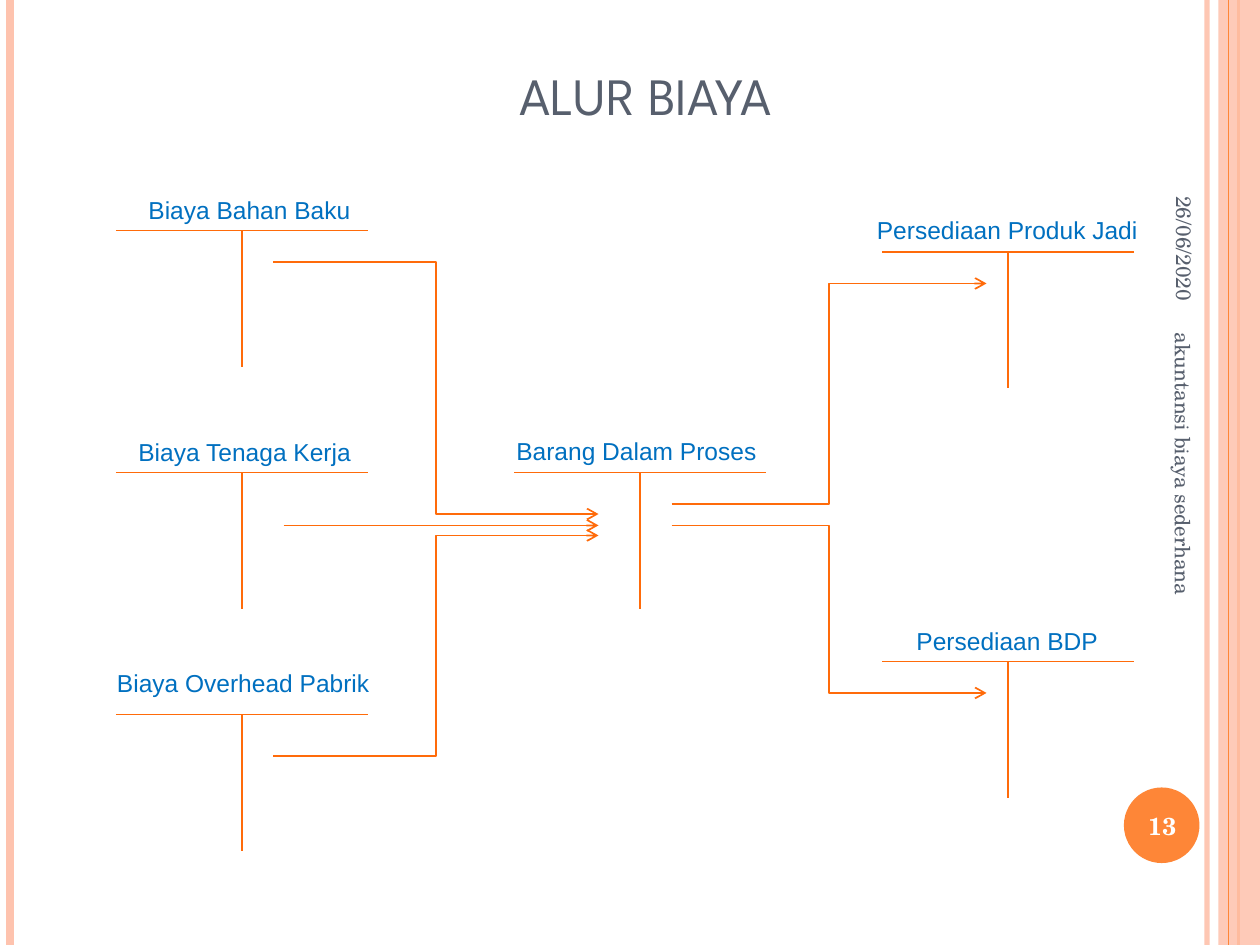
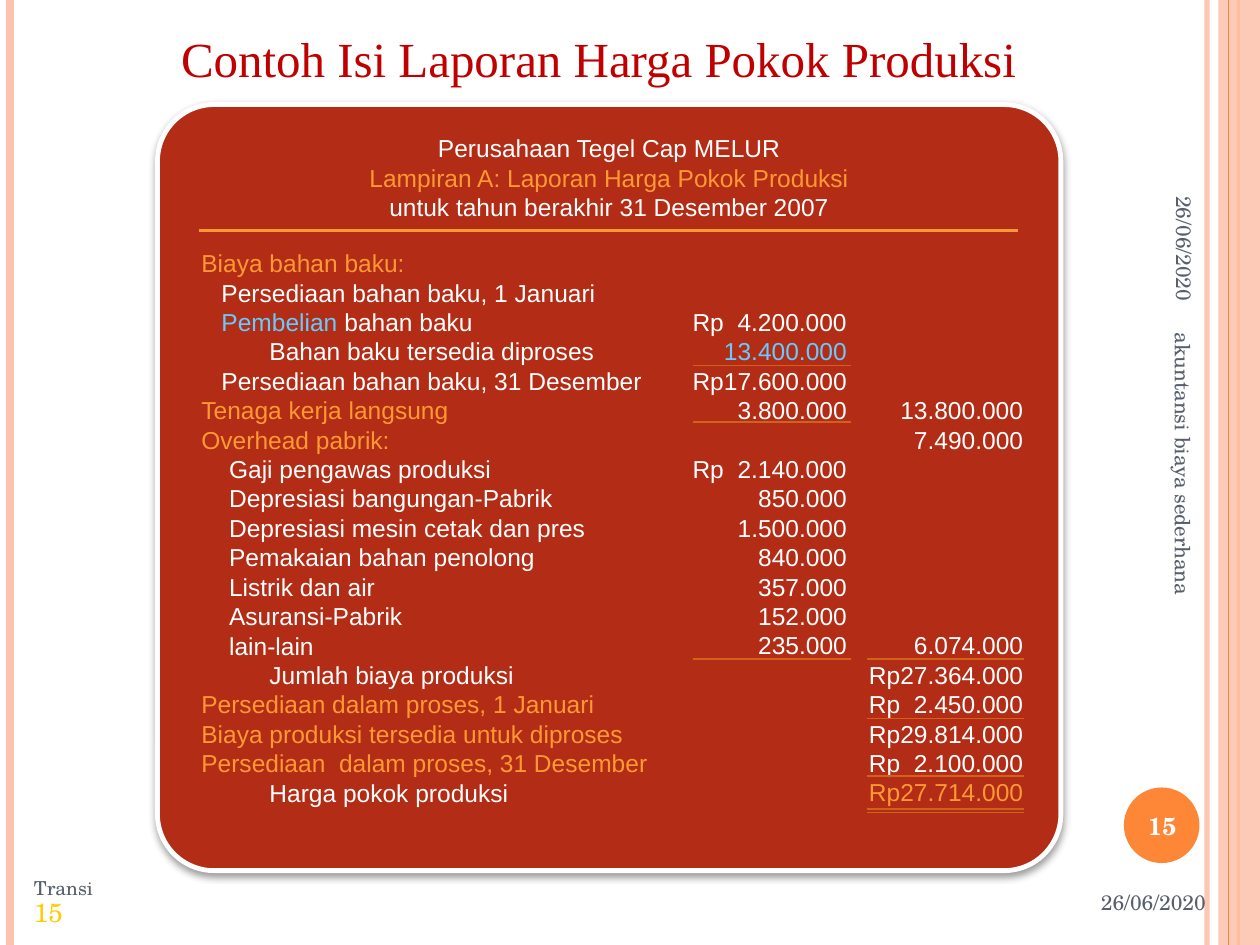
"""Build two cost accounting slides: the cost flow and the production cost report."""
from lxml import etree
from pptx import Presentation
from pptx import util as u
from pptx.dml.color import RGBColor
from pptx.enum import shapes, text
from pptx.oxml.ns import qn

LEFT, CENTER, RIGHT = text.PP_ALIGN.LEFT, text.PP_ALIGN.CENTER, text.PP_ALIGN.RIGHT
TOP, MIDDLE, BOTTOM = (text.MSO_ANCHOR.TOP, text.MSO_ANCHOR.MIDDLE,
                       text.MSO_ANCHOR.BOTTOM)
STRAIGHT, ELBOW = shapes.MSO_CONNECTOR.STRAIGHT, shapes.MSO_CONNECTOR.ELBOW
SHAPE = shapes.MSO_SHAPE
SANS, SERIF = "Arial", "TeX Gyre Schola"
PEACH, ORANGE, FLOW, SUM = "FEC3AE", "FE8637", "FF6B0A", "D2611C"
GRAY, WHITE, GOLD, SKY, BLUE = "575F6D", "FFFFFF", "FF9933", "66CCFF", "0070C0"
BRICK, RED, YELLOW = "B32C16", "C00000", "FFCC00"
ROW = 16.8
DATE = "26/06/2020"


def rgb(hex_color):
    return RGBColor.from_string(hex_color)


def inches(*values):
    return [u.Inches(v) for v in values]


def sub(parent, tag, **attrs):
    return etree.SubElement(parent, qn(tag), {k: str(v) for k, v in attrs.items()})


def set_alpha(fill, percent):
    sub(fill.find(qn("a:srgbClr")), "a:alpha", val=percent * 1000)


def style_run(r, size, font, color, bold=False):
    r.font.size, r.font.name, r.font.bold = u.Pt(size), font, bold
    r.font.color.rgb = rgb(color)


class Deck:
    def __init__(self):
        self.prs = Presentation()
        self.prs.slide_width, self.prs.slide_height = inches(10, 7.5)
        self.s = None

    def slide(self, number):
        self.s = self.prs.slides.add_slide(self.prs.slide_layouts[5])
        self.line((9.58, 0), (9.58, 7.5), PEACH, 3, alpha=93)
        self.line((0.08, 0), (0.08, 7.5), PEACH, 4.5)
        self.line((9.83, 0), (9.83, 7.5), ORANGE, 1.5)
        band = self.shape(SHAPE.RECTANGLE, (9.67, 0, 0.33, 7.5), PEACH)
        set_alpha(band._element.spPr.find(qn("a:solidFill")), 87)
        self.line((9.75, 0), (9.75, 7.5), ORANGE, 0.75)
        self.shape(SHAPE.OVAL, (8.92, 6.25, 0.6, 0.6), ORANGE)
        self.text((8.3, 1.18, 2.2, 0.42), [DATE], 12, SERIF, GRAY, RIGHT, MIDDLE, rot=90)
        self.text((8.89, 6.27, 0.67, 0.57), [str(number)], 14, SERIF, WHITE, CENTER,
                  MIDDLE, bold=True)
        self.text((7.64, 4.09, 3.5, 0.4), ["akuntansi biaya sederhana"], 12, SERIF,
                  GRAY, LEFT, MIDDLE, rot=90)

    def shape(self, kind, box, fill):
        sp = self.s.shapes.add_shape(kind, *inches(*box))
        sp.shadow.inherit = False
        sp.fill.solid()
        sp.fill.fore_color.rgb = rgb(fill)
        sp.line.fill.background()
        return sp

    def line(self, start, end, color, width, kind=STRAIGHT, arrow=False, alpha=None):
        cx = self.s.shapes.add_connector(kind, *inches(*start, *end))
        cx.line.color.rgb = rgb(color)
        cx.line.width = u.Pt(width)
        ln = cx.line._get_or_add_ln()
        if alpha:
            set_alpha(ln.find(qn("a:solidFill")), alpha)
        if arrow:
            sub(ln, "a:tailEnd", type="arrow")
        sub(cx._element.spPr, "a:effectLst")

    def fill_text(self, sp, lines, size, font, color, align, anchor, bold=False):
        tf = sp.text_frame
        tf.word_wrap = True
        tf.auto_size = text.MSO_AUTO_SIZE.NONE
        tf.vertical_anchor = anchor
        tf.text = "\n".join(lines)
        for p in tf.paragraphs:
            p.alignment = align
            if font == SANS:
                p.line_spacing = u.Pt(ROW)
            for r in p.runs:
                style_run(r, size, font, color, bold)
        return tf.paragraphs

    def text(self, box, lines, size=14, font=SANS, color=WHITE, align=LEFT, anchor=TOP,
             bold=False, rot=0):
        sp = self.s.shapes.add_textbox(*inches(*box))
        sp.rotation = rot
        return self.fill_text(sp, lines, size, font, color, align, anchor, bold)

    def title(self, box, line, size, font, color, anchor):
        sp = self.s.shapes.title
        sp.left, sp.top, sp.width, sp.height = inches(*box)
        self.fill_text(sp, [line], size, font, color, CENTER, anchor)

    def t_account(self, left, top):
        self.line((left, top), (left + 2, top), FLOW, 1)
        self.line((left + 1, top), (left + 1, top + 1.08), FLOW, 1)

    def amounts(self, left, width, values):
        """Write right-aligned amounts, keyed by report row, below the report's top."""
        rows = list(values)
        top = 1.92 + rows[0] * ROW / 72
        height = 0.1 + (rows[-1] - rows[0] + 1) * ROW / 72
        ps = self.text((left, top, width, height), list(values.values()), align=RIGHT)
        for p, before, row in zip(ps[1:], rows, rows[1:]):
            p.space_before = u.Pt((row - before - 1) * ROW)
        return dict(zip(rows, ps))


def cost_flow(deck):
    deck.slide(13)
    deck.title((2.5, 0.33, 5.25, 0.72), "ALUR BIAYA", 30, "League Spartan", GRAY, BOTTOM)
    accounts = [
        ("Biaya Bahan Baku", 0.92, 1.83, 1.08, 1.5, 1.83, LEFT),
        ("Biaya Tenaga Kerja", 0.92, 3.75, 1, 3.42, 1.92, LEFT),
        ("Biaya Overhead Pabrik", 0.92, 5.67, 0.83, 5.25, 2.25, LEFT),
        ("Barang Dalam Proses", 4.08, 3.75, 4, 3.41, 2.17, LEFT),
        ("Persediaan Produk Jadi", 7, 2, 6.83, 1.66, 2.33, CENTER),
        ("Persediaan BDP", 7, 5.25, 7.08, 4.92, 1.83, CENTER),
    ]
    for name, left, top, label_left, label_top, width, align in accounts:
        deck.t_account(left, top)
        deck.text((label_left, label_top, width, 0.34), [name], color=BLUE, align=align)
    flows = [
        ((2.17, 2.08), (4.75, 4.08), ELBOW),
        ((2.17, 6), (4.75, 4.25), ELBOW),
        ((2.25, 4.17), (4.75, 4.17), STRAIGHT),
        ((5.33, 4), (7.83, 2.25), ELBOW),
        ((5.33, 4.17), (7.83, 5.5), ELBOW),
    ]
    for start, end, kind in flows:
        deck.line(start, end, FLOW, 1, kind, arrow=True)


def cost_report(deck):
    deck.slide(15)
    deck.title((0.5, 0.25, 8.5, 0.42), "Contoh Isi Laporan Harga Pokok Produksi", 28,
               "Times New Roman", RED, MIDDLE)
    card = deck.shape(SHAPE.ROUNDED_RECTANGLE, (1.25, 0.83, 7.17, 6.08), BRICK)
    card.adjustments[0] = 0.074
    card.line.color.rgb = rgb(WHITE)
    card.line.width = u.Pt(2.75)
    effects = card._element.spPr.find(qn("a:effectLst"))
    shadow = sub(effects, "a:outerShdw", blurRad=u.Pt(4), dist=u.Pt(2), dir=90 * 60000,
                 rotWithShape=0)
    set_alpha_color = sub(shadow, "a:srgbClr", val="000000")
    sub(set_alpha_color, "a:alpha", val=40000)

    items = [
        ("Biaya bahan baku:", 0),
        ("Persediaan bahan baku, 1 Januari", 0.16),
        ("Pembelian", 0.16),
        ("Bahan baku tersedia diproses", 0.54),
        ("Persediaan bahan baku, 31 Desember", 0.16),
        ("Tenaga kerja langsung", 0),
        ("Overhead pabrik:", 0),
        ("Gaji pengawas produksi", 0.22),
        ("Depresiasi bangungan-Pabrik", 0.22),
        ("Depresiasi mesin cetak dan pres", 0.22),
        ("Pemakaian bahan penolong", 0.22),
        ("Listrik dan air", 0.22),
        ("Asuransi-Pabrik", 0.22),
        ("lain-lain", 0.22),
        ("Jumlah biaya produksi", 0.54),
        ("Persediaan dalam proses, 1 Januari", 0),
        ("Biaya produksi tersedia untuk diproses", 0),
        ("Persediaan  dalam proses, 31 Desember", 0),
        ("Harga pokok produksi", 0.54),
    ]
    ps = deck.text((1.5, 1.92, 4.17, 4.58), [name for name, _ in items])
    for p, (_, indent) in zip(ps, items):
        p._p.get_or_add_pPr().set("marL", str(u.Inches(indent)))
        if not indent:
            p.runs[0].font.color.rgb = rgb(GOLD)
    ps[2].runs[0].font.color.rgb = rgb(SKY)
    r = ps[2].add_run()
    r.text = " bahan baku"
    style_run(r, 14, SANS, WHITE)

    details = deck.amounts(5.24, 1.58, {
        2: "Rp  4.200.000", 3: "13.400.000", 4: "Rp17.600.000", 5: "3.800.000",
        7: "Rp  2.140.000", 8: "850.000", 9: "1.500.000", 10: "840.000",
        11: "357.000", 12: "152.000", 13: "235.000"})
    details[3].runs[0].font.color.rgb = rgb(SKY)
    totals = deck.amounts(6.72, 1.5, {
        5: "13.800.000", 6: "7.490.000", 13: "6.074.000", 14: "Rp27.364.000",
        15: "Rp  2.450.000", 16: "Rp29.814.000", 17: "Rp  2.100.000",
        18: "Rp27.714.000"})
    totals[18].runs[0].font.color.rgb = rgb(GOLD)
    for left, tops in ((5.5, (2.9, 3.35, 5.23)), (6.88, (5.23, 5.7, 6.16, 6.42, 6.45))):
        for top in tops:
            deck.line((left, top), (left + 1.25, top), SUM, 0.75)

    heading = deck.text((1.25, 1.01, 7.17, 0.81), [
        "Perusahaan Tegel Cap MELUR", "Lampiran A: Laporan Harga Pokok Produksi",
        "untuk tahun berakhir 31 Desember 2007"], align=CENTER)
    heading[1].runs[0].font.color.rgb = rgb(GOLD)
    deck.line((1.58, 1.83), (8.08, 1.83), GOLD, 1.5)

    note = deck.text((0.17, 6.92, 0.83, 0.5), ["Transi "], 11, SERIF, GRAY, LEFT, MIDDLE)[0]
    note.line_spacing = 0.9
    r = note.add_run()
    r.text = "15"
    style_run(r, 15, SERIF, YELLOW)
    deck.text((6.96, 6.9, 2.71, 0.52), [DATE], 12, SERIF, GRAY, RIGHT, MIDDLE)


def main():
    deck = Deck()
    cost_flow(deck)
    cost_report(deck)
    deck.prs.save("out.pptx")


if __name__ == "__main__":
    main()
